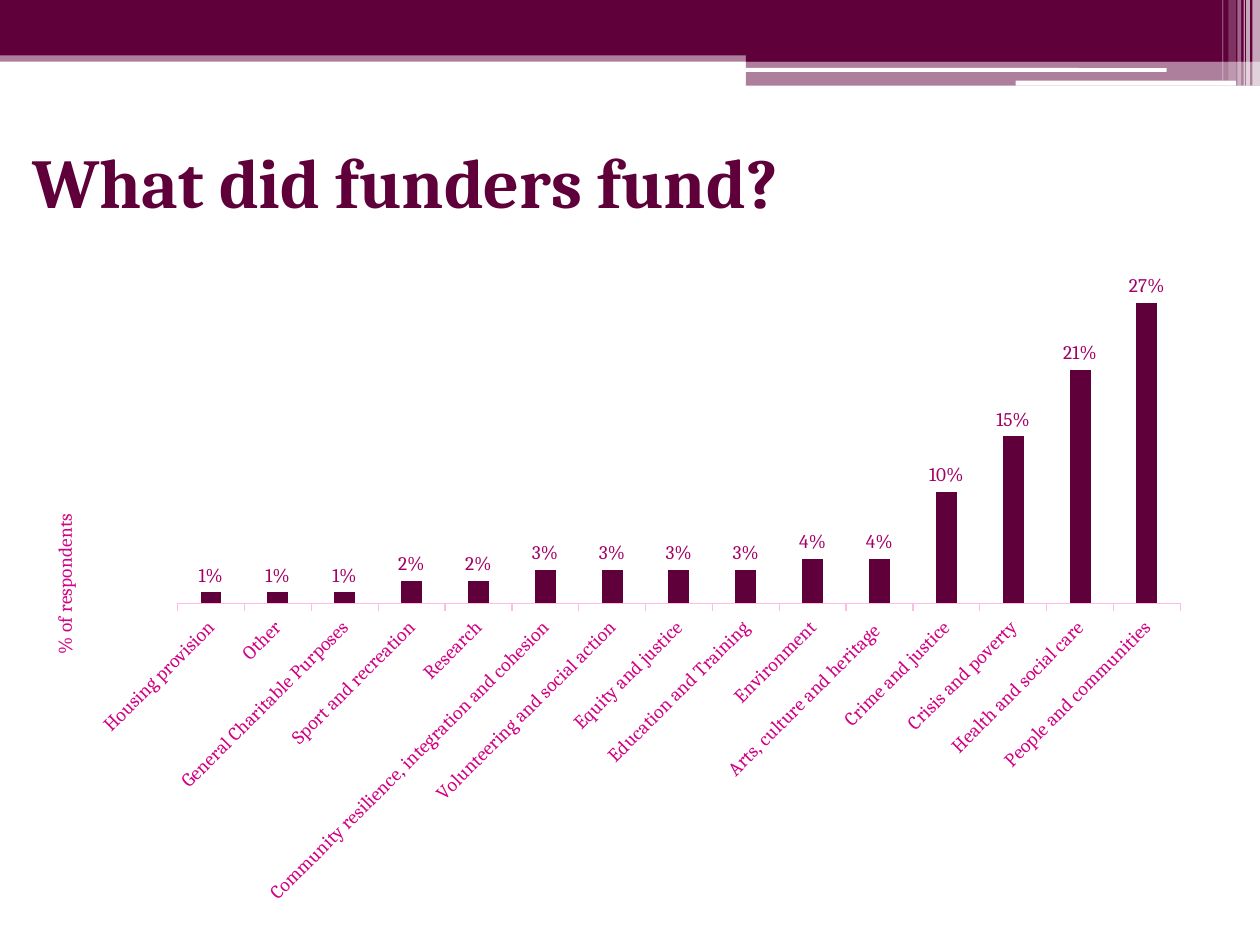
from lxml import etree
from pptx import Presentation
from pptx.chart.data import CategoryChartData
from pptx.dml.color import RGBColor
from pptx.enum.chart import XL_CHART_TYPE, XL_LABEL_POSITION, XL_TICK_LABEL_POSITION, XL_TICK_MARK
from pptx.enum.shapes import MSO_SHAPE
from pptx.enum.text import MSO_ANCHOR
from pptx.oxml.ns import qn
from pptx.util import Inches, Pt

COLUMN = XL_CHART_TYPE.COLUMN_CLUSTERED
OUTSIDE_END = XL_LABEL_POSITION.OUTSIDE_END
LABELS_LOW = XL_TICK_LABEL_POSITION.LOW
TICK_OUT, TICK_NONE = XL_TICK_MARK.OUTSIDE, XL_TICK_MARK.NONE
RECT, ROUND = MSO_SHAPE.RECTANGLE, MSO_SHAPE.ROUNDED_RECTANGLE
MIDDLE = MSO_ANCHOR.MIDDLE

PLUM = RGBColor(0x5F, 0x00, 0x3B)
MAGENTA = RGBColor(0xD2, 0x00, 0x83)
BERRY = RGBColor(0xA3, 0x00, 0x66)
PINK = RGBColor(0xFF, 0xBA, 0xE5)
DARK = RGBColor(0x30, 0x00, 0x1E)
WHITE = RGBColor(0xFF, 0xFF, 0xFF)
FONT = "Cambria"

TITLE = "What did funders fund?"
AXIS_TITLE = "% of respondents"
FUNDED = [
    ("Housing provision", 0.01),
    ("Other", 0.01),
    ("General Charitable Purposes", 0.01),
    ("Sport and recreation", 0.02),
    ("Research", 0.02),
    ("Community resilience, integration and cohesion", 0.03),
    ("Volunteering and social action", 0.03),
    ("Equity and justice", 0.03),
    ("Education and Training", 0.03),
    ("Environment", 0.04),
    ("Arts, culture and heritage ", 0.04),
    ("Crime and justice", 0.1),
    ("Crisis and poverty", 0.15),
    ("Health and social care", 0.21),
    ("People and communities", 0.27),
]

# shape, (left, top, width, height), colour, opacity in percent
BANDS = [
    (RECT, (0, 0.4, 10, 0.09), PLUM, 50),
    (RECT, (0, 0, 10, 0.34), PLUM, 100),
    (RECT, (0, 0.34, 10, 0.1), PLUM, 100),
    (RECT, (5.92, 0.39, 4.08, 0.1), PLUM, 100),
    (RECT, (5.92, 0.48, 4.08, 0.2), PLUM, 50),
    (ROUND, (5.91, 0.54, 3.35, 0.03), WHITE, 100),
    (ROUND, (8.06, 0.64, 1.75, 0.04), WHITE, 100),
]
# left, width, height, opacity in percent
STRIPES = [
    (9.94, 0.06, 0.68, 65),
    (9.89, 0.03, 0.68, 65),
    (9.87, 0.01, 0.68, 60),
    (9.82, 0.03, 0.68, 40),
    (9.75, 0.06, 0.64, 20),
    (9.7, 0.01, 0.64, 30),
]

TITLE_BOX = (0.16, 0.85, 9, 1.17)
CHART_BOX = (0.13, 2.02, 9.43, 5.28)
PLOT_BOX = (1.41, 2.14, 7.96, 2.65)
AXIS_TITLE_AT = (0.38, 4.05)


def set_format(font, **values):
    color = values.pop("color")
    for name, value in {"name": FONT, **values}.items():
        setattr(font, name, value)
    font.color.rgb = color


def add_band(page, kind, box, color, opacity):
    band = page.shapes.add_shape(kind, *map(Inches, box))
    band.shadow.inherit = False
    band.line.fill.background()
    band.fill.solid()
    band.fill.fore_color.rgb = color
    if opacity < 100:
        tint = band.fill._xPr.find(".//" + qn("a:srgbClr"))
        etree.SubElement(tint, qn("a:alpha"), val=str(opacity * 1000))


def place_in_chart(element, index, box, inner=False):
    """Fix a chart part at slide inches, as its child number index."""
    for old in element.findall(qn("c:layout")):
        element.remove(old)
    layout = etree.Element(qn("c:layout"))
    element.insert(index, layout)
    manual = etree.SubElement(layout, qn("c:manualLayout"))
    settings = [("layoutTarget", "inner")] if inner else []
    settings += [("xMode", "edge"), ("yMode", "edge")]
    left, top, width, height = CHART_BOX
    fractions = [(box[0] - left) / width, (box[1] - top) / height]
    fractions += [size / whole for size, whole in zip(box[2:], (width, height))]
    settings += [(name, f"{part:.4f}") for name, part in zip("xywh", fractions)]
    for name, value in settings:
        etree.SubElement(manual, qn("c:" + name), val=value)


def add_title(page):
    box = page.shapes.add_textbox(*map(Inches, TITLE_BOX))
    frame = box.text_frame
    frame.word_wrap = True
    frame.vertical_anchor = MIDDLE
    span = frame.paragraphs[0].add_run()
    span.text = TITLE
    set_format(span.font, size=Pt(40), bold=True, color=PLUM)


def add_funding_chart(page):
    data = CategoryChartData(number_format="0%")
    data.categories = [name for name, share in FUNDED]
    data.add_series("Series 1", [share for name, share in FUNDED])
    chart = page.shapes.add_chart(COLUMN, *map(Inches, CHART_BOX), data).chart
    chart.has_legend = False
    chart.has_title = False
    set_format(chart.font, size=Pt(11), color=DARK)
    place_in_chart(chart._chartSpace.chart.plotArea, 0, PLOT_BOX, inner=True)

    plot = chart.plots[0]
    plot.gap_width, plot.overlap = 219, -27
    plot.vary_by_categories = False
    bars = plot.series[0].format.fill
    bars.solid()
    bars.fore_color.rgb = PLUM
    plot.has_data_labels = True
    labels = plot.data_labels
    label_format = {"show_value": True, "position": OUTSIDE_END,
                    "number_format": "0%", "number_format_is_linked": False}
    for name, value in label_format.items():
        setattr(labels, name, value)
    set_format(labels.font, size=Pt(11), color=BERRY)

    categories = chart.category_axis
    categories.major_tick_mark = TICK_OUT
    categories.minor_tick_mark = TICK_NONE
    categories.tick_label_position = LABELS_LOW
    categories.format.line.color.rgb = PINK
    categories.format.line.width = Pt(0.75)
    set_format(categories.tick_labels.font, size=Pt(11), color=MAGENTA)
    slant = categories._element.find(qn("c:txPr")).find(qn("a:bodyPr"))
    slant.set("rot", "-2700000")
    slant.set("vert", "horz")

    values = chart.value_axis
    values.minimum_scale, values.maximum_scale = 0, 0.3
    values.has_major_gridlines = False
    values.visible = False
    frame = values.axis_title.text_frame
    span = frame.paragraphs[0].add_run()
    span.text = AXIS_TITLE
    set_format(span.font, size=Pt(11), bold=False, color=MAGENTA)
    upright = frame._txBody.find(qn("a:bodyPr"))
    upright.set("rot", "-5400000")
    upright.set("vert", "horz")
    place_in_chart(values.axis_title._element, 1, AXIS_TITLE_AT)


def main():
    deck = Presentation()
    deck.slide_width, deck.slide_height = Inches(10), Inches(7.5)
    page = deck.slides.add_slide(deck.slide_layouts[6])
    for band in BANDS:
        add_band(page, *band)
    for left, width, height, opacity in STRIPES:
        add_band(page, RECT, (left, 0, width, height), WHITE, opacity)
    add_title(page)
    add_funding_chart(page)
    deck.save("out.pptx")


if __name__ == "__main__":
    main()
